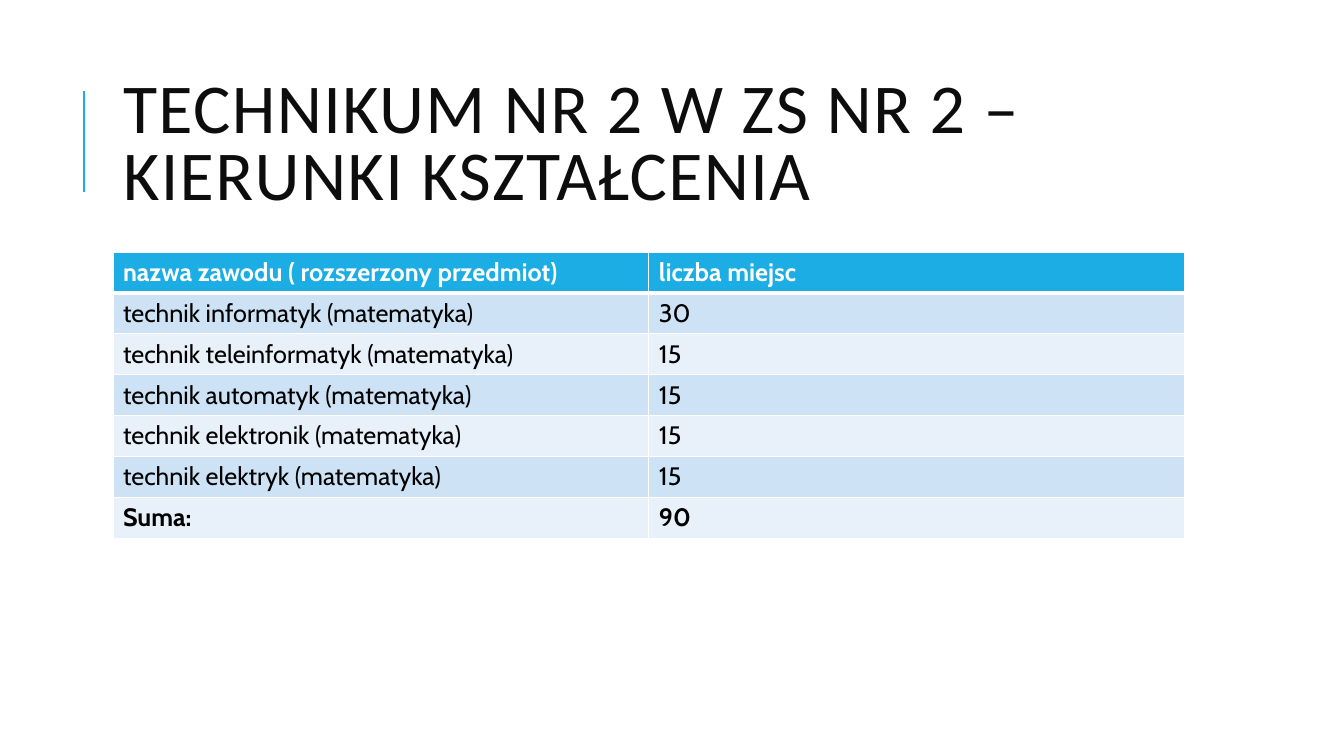
import pptx
import pptx.dml.color
import pptx.enum.shapes
import pptx.enum.text
import pptx.oxml.ns
import pptx.util
import lxml.etree

HEADING = "TECHNIKUM NR 2 W ZS NR 2 – KIERUNKI KSZTAŁCENIA"
COURSES = [
    ("nazwa zawodu ( rozszerzony przedmiot)", "liczba miejsc"),
    ("technik informatyk (matematyka)", "30"),
    ("technik teleinformatyk (matematyka)", "15"),
    ("technik automatyk (matematyka)", "15"),
    ("technik elektronik (matematyka)", "15"),
    ("technik elektryk (matematyka)", "15"),
    ("Suma:", "90"),
]
LAST = len(COURSES) - 1

WHITE = pptx.dml.color.RGBColor(0xFF, 0xFF, 0xFF)
BLACK = pptx.dml.color.RGBColor(0x00, 0x00, 0x00)
INK = pptx.dml.color.RGBColor(0x0D, 0x0D, 0x0D)
ACCENT = pptx.dml.color.RGBColor(0x1C, 0xAD, 0xE4)
BAND_DARK = pptx.dml.color.RGBColor(0xCD, 0xE3, 0xF5)
BAND_LIGHT = pptx.dml.color.RGBColor(0xE8, 0xF1, 0xFA)

inches = pptx.util.Inches
qn = pptx.oxml.ns.qn
LEFT, WIDTH = inches(1.12), inches(10.63)
ROW_HEIGHT = inches(2.84 / len(COURSES))


def style_run(run, font_name, size, color, bold=False):
    run.font.name = font_name
    run.font.size = pptx.util.Pt(size)
    run.font.color.rgb = color
    run.font.bold = bold


def add_border(cell, side, points):
    properties = cell._tc.get_or_add_tcPr()
    border = lxml.etree.SubElement(properties, qn(f"a:ln{side}"), w=str(pptx.util.Pt(points)))
    fill = lxml.etree.SubElement(border, qn("a:solidFill"))
    lxml.etree.SubElement(fill, qn("a:srgbClr"), val=str(WHITE))


def add_heading(slide):
    heading = slide.shapes.title
    heading.left, heading.top = LEFT, inches(0.64)
    heading.width, heading.height = WIDTH, inches(1.64)
    frame = heading.text_frame
    frame.text = HEADING
    frame.word_wrap = True
    frame.auto_size = pptx.enum.text.MSO_AUTO_SIZE.NONE
    frame.vertical_anchor = pptx.enum.text.MSO_ANCHOR.MIDDLE
    paragraph = frame.paragraphs[0]
    paragraph.alignment = pptx.enum.text.PP_ALIGN.LEFT
    paragraph.line_spacing = 0.8
    run = paragraph.runs[0]
    style_run(run, "Calibri", 50, INK)
    run.font._element.set("spc", "100")


def add_accent_line(slide):
    accent_line = slide.shapes.add_connector(
        pptx.enum.shapes.MSO_CONNECTOR.STRAIGHT,
        inches(0.83), inches(1.9), inches(0.83), inches(0.9))
    accent_line.line.color.rgb = ACCENT
    accent_line.line.width = pptx.util.Pt(1.5)
    lxml.etree.SubElement(accent_line._element.spPr, qn("a:effectLst"))


def add_courses(slide):
    courses = slide.shapes.add_table(
        len(COURSES), 2, LEFT, inches(2.5), WIDTH, ROW_HEIGHT * len(COURSES)).table
    for row, texts in enumerate(COURSES):
        for column, text in enumerate(texts):
            cell = courses.cell(row, column)
            cell.text = text
            style_run(cell.text_frame.paragraphs[0].runs[0], "Cabin", 18,
                      BLACK if row else WHITE, row in (0, LAST))
            add_border(cell, "L", 1)
            add_border(cell, "R", 1)
            add_border(cell, "T", 3 if row == 1 else 1)
            add_border(cell, "B", 3 if row == 0 else 1)
            cell.fill.solid()
            band = BAND_DARK if row % 2 else BAND_LIGHT
            cell.fill.fore_color.rgb = band if row else ACCENT


def main():
    deck = pptx.Presentation()
    deck.slide_width, deck.slide_height = inches(13.33), inches(7.5)
    slide = deck.slides.add_slide(deck.slide_layouts[5])
    add_accent_line(slide)
    add_heading(slide)
    add_courses(slide)
    deck.save("out.pptx")


if __name__ == "__main__":
    main()
